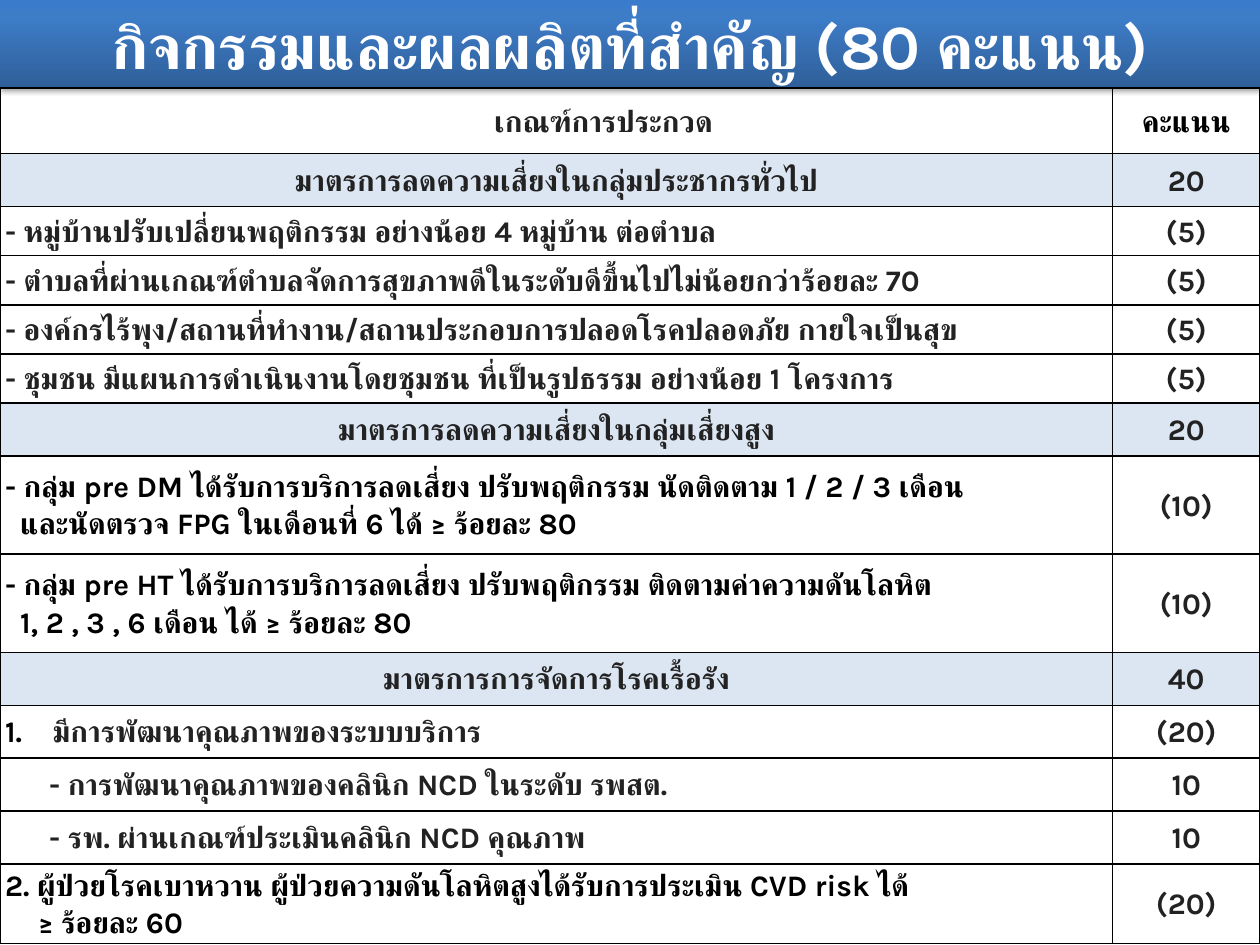
from lxml.etree import SubElement
from pptx import Presentation
from pptx.dml.color import RGBColor
from pptx.enum.shapes import MSO_SHAPE
from pptx.enum.text import MSO_ANCHOR, PP_ALIGN
from pptx.oxml import parse_xml
from pptx.oxml.ns import nsdecls, qn
from pptx.util import Inches, Pt

FONT = "Karla"
BLACK, DARK, BAND = "000000", "222222", "DCE6F2"


def rgb(color):
    return RGBColor.from_string(color)


def style(p, size, color, align, left=0, indent=0):
    p.alignment = align
    pPr = p._p.get_or_add_pPr()
    pPr.set("marL", str(Inches(left)))
    pPr.set("indent", str(Inches(indent)))
    for r in p.runs:
        r.font.size = Pt(size)
        r.font.bold = True
        r.font.name = FONT
        r.font.color.rgb = rgb(color)
        SubElement(r._r.get_or_add_rPr(), qn("a:cs")).set("typeface", FONT)


prs = Presentation()
prs.slide_width, prs.slide_height = Inches(10), Inches(7.5)
W, H = prs.slide_width, prs.slide_height
s = prs.slides.add_slide(prs.slide_layouts[6])
title_h = Inches(0.7)

# Title bar with a vertical gradient and a soft shadow below
bar = s.shapes.add_shape(MSO_SHAPE.RECTANGLE, 0, 0, W, title_h)
bar.line.fill.background()
bar.shadow.inherit = False
spPr = bar._element.spPr
stops = "".join(f'<a:gs pos="{pos * 1000}"><a:srgbClr val="{color}"/></a:gs>'
                for pos, color in ((0, "2F5F99"), (80, "3D7CC7"), (100, "3A7CCB")))
spPr.find(qn("a:prstGeom")).addnext(parse_xml(
    f'<a:gradFill {nsdecls("a")} rotWithShape="1"><a:gsLst>{stops}</a:gsLst>'
    '<a:lin ang="16200000" scaled="0"/></a:gradFill>'))
spPr.find(qn("a:effectLst")).append(parse_xml(
    f'<a:outerShdw {nsdecls("a")} blurRad="{Pt(3.1)}" dist="{Pt(1.8)}" dir="5400000" '
    'rotWithShape="0"><a:srgbClr val="000000"><a:alpha val="35000"/></a:srgbClr></a:outerShdw>'))
tf = bar.text_frame
tf.word_wrap = True
tf.vertical_anchor = MSO_ANCHOR.MIDDLE
tf.margin_top = tf.margin_bottom = 0
tf.text = "กิจกรรมและผลผลิตที่สำคัญ (80 คะแนน)"
style(tf.paragraphs[0], 36, "FFFFFF", PP_ALIGN.CENTER)

# Row kinds: alignment, left margin and first-line indent of the criterion
KINDS = {
    "head": (PP_ALIGN.CENTER, 1, -0.25),
    "group": (PP_ALIGN.CENTER, 0.99, -0.99),
    "item": (PP_ALIGN.LEFT, 0.38, -0.38),
    "number": (PP_ALIGN.LEFT, 0.38, -0.38),
    "sub": (PP_ALIGN.LEFT, 0.35, 0),
}

# Kind, row height, criterion lines, score, left margin of a second line
ROWS = [
    ("head", 0.52, ["เกณฑ์การประกวด"], "คะแนน", 0),
    ("group", 0.42, ["มาตรการลดความเสี่ยงในกลุ่มประชากรทั่วไป"], "20", 0),
    ("item", 0.39, ["- หมู่บ้านปรับเปลี่ยนพฤติกรรม อย่างน้อย 4 หมู่บ้าน ต่อตำบล"], "(5)", 0),
    ("item", 0.39, ["- ตำบลที่ผ่านเกณฑ์ตำบลจัดการสุขภาพดีในระดับดีขึ้นไปไม่น้อยกว่าร้อยละ 70"], "(5)", 0),
    ("item", 0.39, ["- องค์กรไร้พุง/สถานที่ทำงาน/สถานประกอบการปลอดโรคปลอดภัย กายใจเป็นสุข"], "(5)", 0),
    ("item", 0.39, ["- ชุมชน มีแผนการดำเนินงานโดยชุมชน ที่เป็นรูปธรรม อย่างน้อย 1 โครงการ"], "(5)", 0),
    ("group", 0.42, ["มาตรการลดความเสี่ยงในกลุ่มเสี่ยงสูง"], "20", 0),
    ("item", 0.78, ["- กลุ่ม pre DM ได้รับการบริการลดเสี่ยง ปรับพฤติกรรม นัดติดตาม 1 / 2 / 3 เดือน",
                    "และนัดตรวจ FPG ในเดือนที่ 6 ได้ ≥ ร้อยละ 80"], "(10)", 0.12),
    ("item", 0.78, ["- กลุ่ม pre HT ได้รับการบริการลดเสี่ยง ปรับพฤติกรรม ติดตามค่าความดันโลหิต",
                    "1, 2 , 3 , 6 เดือน ได้ ≥ ร้อยละ 80"], "(10)", 0.12),
    ("group", 0.42, ["มาตรการการจัดการโรคเรื้อรัง"], "40", 0),
    ("number", 0.42, ["มีการพัฒนาคุณภาพของระบบบริการ"], "(20)", 0),
    ("sub", 0.42, ["- การพัฒนาคุณภาพของคลินิก NCD ในระดับ รพสต."], "10", 0),
    ("sub", 0.42, ["- รพ. ผ่านเกณฑ์ประเมินคลินิก NCD คุณภาพ"], "10", 0),
    ("item", 0.63, ["2. ผู้ป่วยโรคเบาหวาน ผู้ป่วยความดันโลหิตสูงได้รับการประเมิน CVD risk ได้",
                    "≥ ร้อยละ 60"], "(20)", 0.26),
]

# Criteria table
table = s.shapes.add_table(len(ROWS), 2, 0, title_h, W, H - title_h).table
table.first_row = table.horz_banding = False
table.columns[0].width = Inches(8.83)
table.columns[1].width = W - Inches(8.83)

for i, (kind, height, lines, score, second_left) in enumerate(ROWS):
    table.rows[i].height = Inches(height)
    align, left, indent = KINDS[kind]
    criterion, points = table.cell(i, 0), table.cell(i, 1)
    criterion.text_frame.text = "\n".join(lines)
    points.text_frame.text = score

    # Text: two-line criteria and the score heading are black
    for n, p in enumerate(criterion.text_frame.paragraphs):
        color = BLACK if len(lines) > 1 else DARK
        if n:
            style(p, 17, color, align, second_left)
        else:
            style(p, 17, color, align, left, indent)
    style(points.text_frame.paragraphs[0], 17, BLACK if kind == "head" else DARK, PP_ALIGN.CENTER)

    # Cell margins, borders and fill
    for cell in (criterion, points):
        cell.vertical_anchor = MSO_ANCHOR.MIDDLE
        cell.margin_left = cell.margin_right = Inches(0.04)
        cell.margin_top = cell.margin_bottom = 0
        for p in cell.text_frame.paragraphs:
            p.line_spacing = 1.07
        for side in "LRTB":
            cell._tc.get_or_add_tcPr().append(parse_xml(
                f'<a:ln{side} {nsdecls("a")} w="{Pt(1)}"><a:solidFill>'
                f'<a:srgbClr val="{BLACK}"/></a:solidFill></a:ln{side}>'))
        if kind == "group":
            cell.fill.solid()
            cell.fill.fore_color.rgb = rgb(BAND)
        else:
            cell.fill.background()

    # Automatic number in black
    if kind == "number":
        pPr = criterion.text_frame.paragraphs[0]._p.get_or_add_pPr()
        SubElement(SubElement(pPr, qn("a:buClr")), qn("a:srgbClr")).set("val", BLACK)
        SubElement(pPr, qn("a:buFont")).set("typeface", "+mj-lt")
        SubElement(pPr, qn("a:buAutoNum")).set("type", "arabicPeriod")

prs.save("out.pptx")
